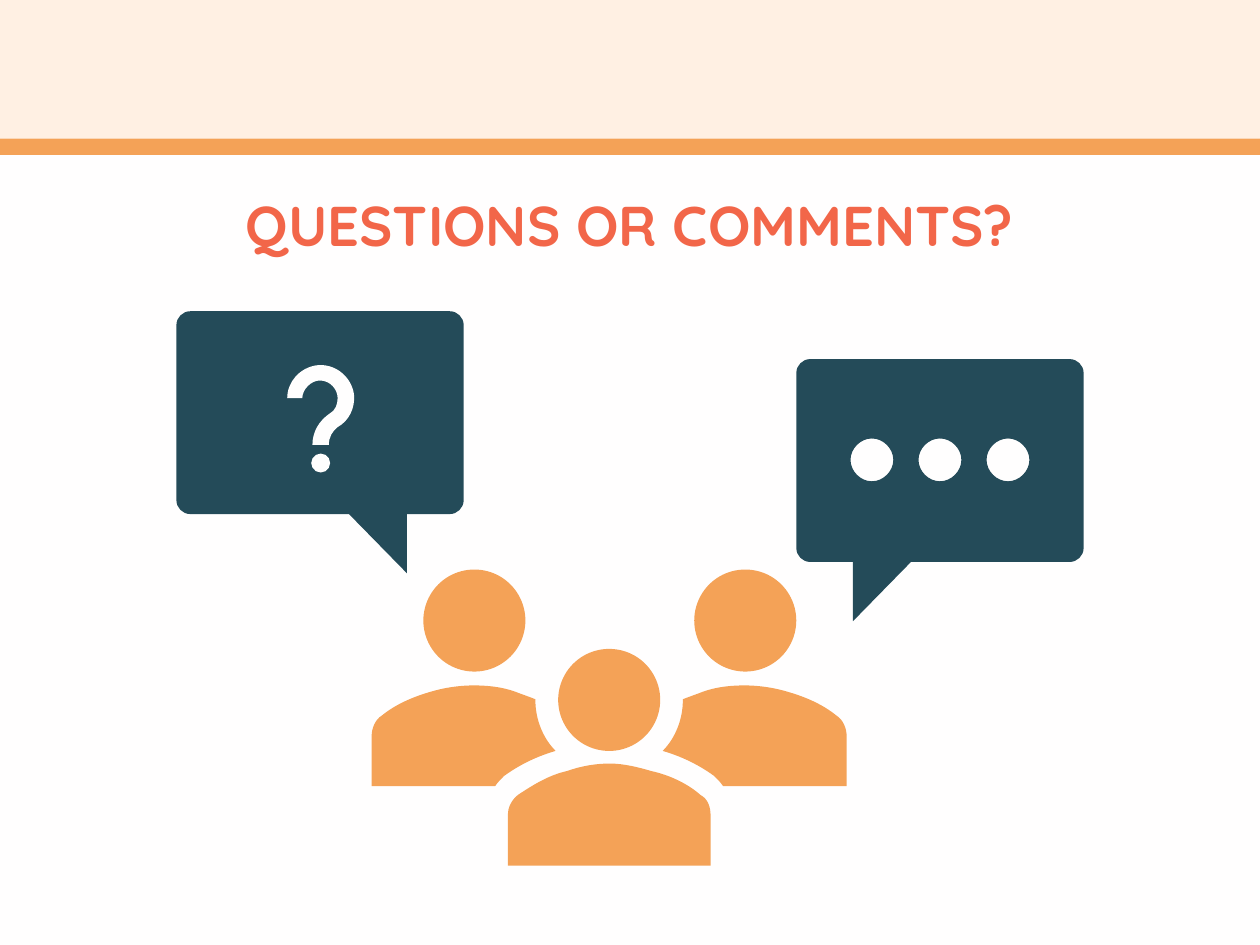
from dataclasses import dataclass

from lxml import etree
from pptx import Presentation
from pptx.dml.color import RGBColor
from pptx.enum.shapes import MSO_SHAPE
from pptx.enum.text import MSO_ANCHOR, PP_ALIGN
from pptx.oxml.ns import qn
from pptx.util import Inches, Pt

RECTANGLE, OVAL = MSO_SHAPE.RECTANGLE, MSO_SHAPE.OVAL
MIDDLE, CENTER = MSO_ANCHOR.MIDDLE, PP_ALIGN.CENTER

COLORS = {
    "paper": "FFFEFE",
    "cream": "FFF0E3",
    "orange": "F4A257",
    "coral": "F26649",
    "teal": "244B59",
}
FONT = "Quicksand"
HEAD_SIZE = 0.81
BODY_SPAN = 9.67  # left edge of one back body plus right edge of the other

# A step is (x, y) for a line or (x1, y1, x2, y2, x, y) for a cubic curve
Step = tuple[float, ...]


@dataclass(frozen=True)
class Bubble:
    left: float
    top: float
    mirrored: bool
    dots: int


@dataclass(frozen=True)
class Head:
    left: float
    top: float


BUBBLES = [Bubble(6.32, 2.85, False, 3), Bubble(1.4, 2.47, True, 0)]
HEADS = [Head(3.36, 4.52), Head(5.51, 4.52), Head(4.43, 5.15)]

BUBBLE_WIDTH = 2.28
BUBBLE_STEPS: list[Step] = [
    (0.11, 0), (0.05, 0, 0, 0.05, 0, 0.11),
    (0, 1.5), (0, 1.56, 0.05, 1.61, 0.11, 1.61),
    (0.45, 1.61), (0.45, 2.08), (0.91, 1.61),
    (2.17, 1.61), (2.23, 1.61, 2.28, 1.56, 2.28, 1.5),
    (2.28, 0.11), (2.28, 0.05, 2.23, 0, 2.17, 0),
]
DOT_STEPS: list[Step] = [
    (0, 0.17), (0, 0.08, 0.08, 0, 0.17, 0), (0.26, 0, 0.34, 0.08, 0.34, 0.17),
    (0.34, 0.26, 0.26, 0.34, 0.17, 0.34), (0.08, 0.34, 0, 0.26, 0, 0.17),
]
QUESTION_HOOK: list[Step] = [
    (2.81, 3.13), (2.79, 2.99, 2.66, 2.88, 2.51, 2.9),
    (2.38, 2.92, 2.28, 3.03, 2.28, 3.16),
    (2.4, 3.16), (2.4, 3.09, 2.47, 3.02, 2.54, 3.02),
    (2.62, 3.02, 2.68, 3.09, 2.68, 3.16),
    (2.68, 3.21, 2.66, 3.26, 2.62, 3.28),
    (2.53, 3.34, 2.48, 3.43, 2.48, 3.53),
    (2.61, 3.53), (2.61, 3.47, 2.64, 3.42, 2.68, 3.39),
    (2.77, 3.34, 2.82, 3.24, 2.81, 3.13),
]
FRONT_BODY: list[Step] = [
    (5.64, 6.87), (5.64, 6.47), (5.64, 6.41, 5.62, 6.34, 5.56, 6.31),
    (5.46, 6.22, 5.31, 6.15, 5.17, 6.12),
    (5.07, 6.09, 4.95, 6.06, 4.84, 6.06),
    (4.73, 6.06, 4.61, 6.08, 4.5, 6.12),
    (4.36, 6.15, 4.23, 6.23, 4.11, 6.31),
    (4.06, 6.35, 4.03, 6.41, 4.03, 6.47), (4.03, 6.87),
]
RIGHT_BODY: list[Step] = [
    (6.64, 5.68), (6.53, 5.59, 6.39, 5.53, 6.25, 5.49),
    (6.15, 5.46, 6.03, 5.44, 5.91, 5.44),
    (5.81, 5.44, 5.69, 5.45, 5.58, 5.49),
    (5.53, 5.51, 5.47, 5.53, 5.42, 5.55),
    (5.42, 5.56), (5.42, 5.71, 5.36, 5.86, 5.26, 5.96),
    (5.43, 6.01, 5.56, 6.08, 5.67, 6.16),
    (5.7, 6.19, 5.72, 6.21, 5.74, 6.24),
    (6.72, 6.24), (6.72, 5.84), (6.72, 5.78, 6.69, 5.71, 6.64, 5.68),
]


def mirror(steps: list[Step], span: float) -> list[Step]:
    return [tuple(value if index % 2 else span - value
                  for index, value in enumerate(step)) for step in steps]


def move(steps: list[Step], left: float, top: float) -> list[Step]:
    return [tuple(value + (top if index % 2 else left)
                  for index, value in enumerate(step)) for step in steps]


def paint(shape, color: str) -> None:
    shape.shadow.inherit = False
    shape.fill.solid()
    shape.fill.fore_color.rgb = RGBColor.from_string(COLORS[color])
    shape.line.fill.background()


def add_preset(slide, kind, left: float, top: float, width: float, height: float,
               color: str) -> None:
    paint(slide.shapes.add_shape(kind, Inches(left), Inches(top),
                                 Inches(width), Inches(height)), color)


def add_outline(slide, contours: list[list[Step]], color: str) -> None:
    """Draw closed contours; inner ones become holes."""
    builder = None
    for steps in contours:
        points = [(Inches(step[i]), Inches(step[i + 1]))
                  for step in steps for i in range(0, len(step), 2)]
        if builder is None:
            builder = slide.shapes.build_freeform(*points[0])
        else:
            builder.move_to(*points[0])
        builder.add_line_segments(points[1:], close=True)
    shape = builder.convert_to_shape()

    # Join each three segments of a curved step into one cubic curve
    segments = iter(list(shape.element.iter(qn("a:lnTo"))))
    for steps in contours:
        for step in steps[1:]:
            first = next(segments)
            if len(step) == 6:
                curve = etree.Element(qn("a:cubicBezTo"))
                first.addprevious(curve)
                for segment in (first, next(segments), next(segments)):
                    curve.append(segment[0])
                    segment.getparent().remove(segment)
    paint(shape, color)


def add_text(slide, text: str, *, left: float, top: float, width: float,
             height: float, size: float, color: str, bold: bool = False) -> None:
    box = slide.shapes.add_textbox(Inches(left), Inches(top), Inches(width), Inches(height))
    frame = box.text_frame
    frame.word_wrap = True
    frame.vertical_anchor = MIDDLE
    paragraph = frame.paragraphs[0]
    paragraph.alignment = CENTER
    paragraph.line_spacing = 0.9
    run = paragraph.add_run()
    run.text = text
    run.font.name = FONT
    run.font.size = Pt(size)
    run.font.bold = bold
    run.font.color.rgb = RGBColor.from_string(COLORS[color])


def add_bubble(slide, bubble: Bubble) -> None:
    steps = mirror(BUBBLE_STEPS, BUBBLE_WIDTH) if bubble.mirrored else BUBBLE_STEPS
    contours = [steps] + [move(DOT_STEPS, 0.43 + index * 0.54, 0.63)
                          for index in range(bubble.dots)]
    add_outline(slide, [move(contour, bubble.left, bubble.top) for contour in contours], "teal")


def main() -> None:
    presentation = Presentation()
    presentation.slide_width, presentation.slide_height = Inches(10), Inches(7.5)
    slide = presentation.slides.add_slide(presentation.slide_layouts[6])
    slide.background.fill.solid()
    slide.background.fill.fore_color.rgb = RGBColor.from_string(COLORS["paper"])

    # Header band and title
    add_preset(slide, RECTANGLE, 0, 0, 10, 1.1, "cream")
    add_preset(slide, RECTANGLE, 0, 1.1, 10, 0.13, "orange")
    add_text(slide, "QUESTIONS OR COMMENTS?", left=0.69, top=1.51, width=8.62,
             height=0.6, size=32, color="coral", bold=True)

    # Speech bubbles and question mark
    for bubble in BUBBLES:
        add_bubble(slide, bubble)
    add_outline(slide, [QUESTION_HOOK], "paper")
    add_preset(slide, OVAL, 2.47, 3.6, 0.15, 0.15, "paper")

    # Group of three people
    for head in HEADS:
        add_preset(slide, OVAL, head.left, head.top, HEAD_SIZE, HEAD_SIZE, "orange")
    for body in (FRONT_BODY, RIGHT_BODY, mirror(RIGHT_BODY, BODY_SPAN)):
        add_outline(slide, [body], "orange")

    presentation.save("out.pptx")


if __name__ == "__main__":
    main()
